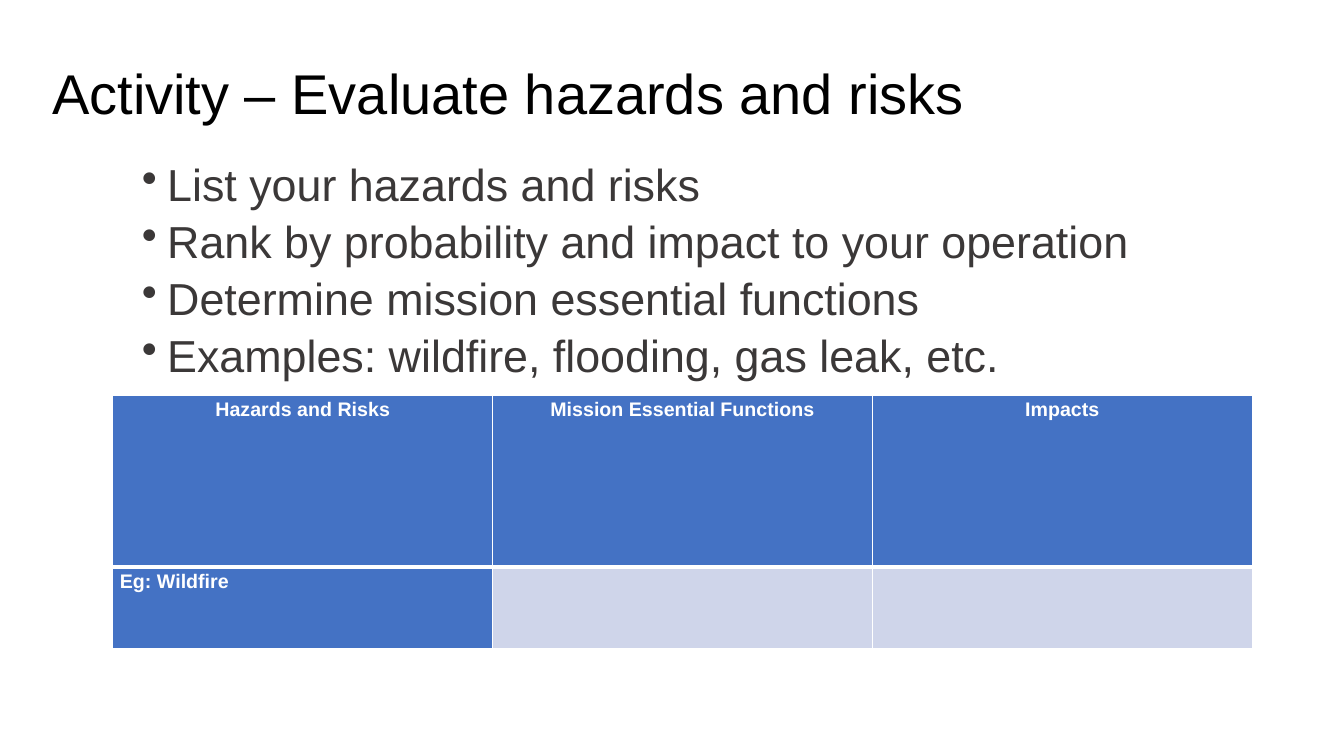
import dataclasses
import lxml.etree
import pptx
import pptx.dml.color
import pptx.enum.text
import pptx.oxml
import pptx.oxml.ns
import pptx.util


@dataclasses.dataclass(frozen=True)
class Theme:
    font: str = "Arial"
    black: str = "000000"
    gray: str = "3B3838"
    white: str = "FFFFFF"
    blue: str = "4472C4"
    pale: str = "CFD5EA"
    title: int = 40
    body: int = 32
    cell: int = 14


class Deck:
    def __init__(self, theme):
        self.theme = theme
        self.show = pptx.Presentation()
        self.show.slide_width = pptx.util.Inches(13.33)
        self.show.slide_height = pptx.util.Inches(7.5)
        self.slide = self.show.slides.add_slide(self.show.slide_layouts[6])

    def place(self, left, top, width, height):
        wide, high = self.show.slide_width, self.show.slide_height
        return [int(share * side / 100) for share, side in
                ((left, wide), (top, high), (width, wide), (height, high))]

    def color(self, code):
        return pptx.dml.color.RGBColor.from_string(code)

    def style(self, para, size, code, bold=False):
        for run in para.runs:
            run.font.name = self.theme.font
            run.font.size = pptx.util.Pt(size)
            run.font.color.rgb = self.color(code)
            run.font.bold = bold

    def frame(self, area):
        frame = self.slide.shapes.add_textbox(*self.place(*area)).text_frame
        frame.word_wrap = True
        return frame

    def title(self, text, area):
        frame = self.frame(area)
        frame.margin_top = pptx.util.Inches(0.11)
        frame.text = text
        para = frame.paragraphs[0]
        para.line_spacing = 0.9
        self.style(para, self.theme.title, self.theme.black)

    def bullets(self, lines, area):
        frame = self.frame(area)
        frame.text = "\n".join(lines)
        for rank, para in enumerate(frame.paragraphs):
            para.line_spacing = 0.8
            para.space_before = pptx.util.Pt(10 if rank else 0)
            props = para._p.get_or_add_pPr()
            indent = pptx.util.Inches(0.25)
            props.set("marL", str(indent))
            props.set("indent", str(-indent))
            tag = pptx.oxml.ns.qn("a:buChar")
            lxml.etree.SubElement(props, tag).set("char", "•")
            self.style(para, self.theme.body, self.theme.gray)

    def edge(self, cell, side, width):
        space = pptx.oxml.ns.nsdecls("a")
        line = pptx.oxml.parse_xml(
            f'<a:{side} {space} w="{pptx.util.Pt(width)}"><a:solidFill>'
            f'<a:srgbClr val="{self.theme.white}"/></a:solidFill></a:{side}>')
        cell._tc.get_or_add_tcPr().append(line)

    def cell(self, cell, text, head, lead):
        cell.margin_left = cell.margin_right = pptx.util.Inches(0.07)
        cell.margin_top = cell.margin_bottom = 0
        for side in ("lnL", "lnR", "lnT", "lnB"):
            thick = side == ("lnB" if head else "lnT")
            self.edge(cell, side, 3 if thick else 1)
        cell.fill.solid()
        solid = self.theme.blue if head or lead else self.theme.pale
        cell.fill.fore_color.rgb = self.color(solid)
        if text:
            cell.text = text
            para = cell.text_frame.paragraphs[0]
            para.line_spacing = 1.15
            align = pptx.enum.text.PP_ALIGN
            para.alignment = align.CENTER if head else align.LEFT
            self.style(para, self.theme.cell, self.theme.white, True)

    def table(self, rows, area, shares):
        spot = self.place(*area)
        grid = self.slide.shapes.add_table(len(rows), len(rows[0]), *spot).table
        for row, share in zip(grid.rows, shares):
            row.height = int(spot[3] * share)
        for down, texts in enumerate(rows):
            for over, text in enumerate(texts):
                self.cell(grid.cell(down, over), text, down == 0, over == 0)

    def save(self):
        self.show.save("out.pptx")


def main():
    deck = Deck(Theme())
    deck.title("Activity – Evaluate hazards and risks",
               (3.15, 7.33, 93.62, 19.33))
    deck.bullets(["List your hazards and risks",
                  "Rank by probability and impact to your operation",
                  "Determine mission essential functions",
                  "Examples: wildfire, flooding, gas leak, etc."],
                 (9.83, 21.47, 78.09, 30.93))
    deck.table([["Hazards and Risks", "Mission Essential Functions", "Impacts"],
                ["Eg: Wildfire", "", ""]],
               (8.4, 52.27, 84.77, 33.47), (0.68, 0.32))
    deck.save()


if __name__ == "__main__":
    main()
